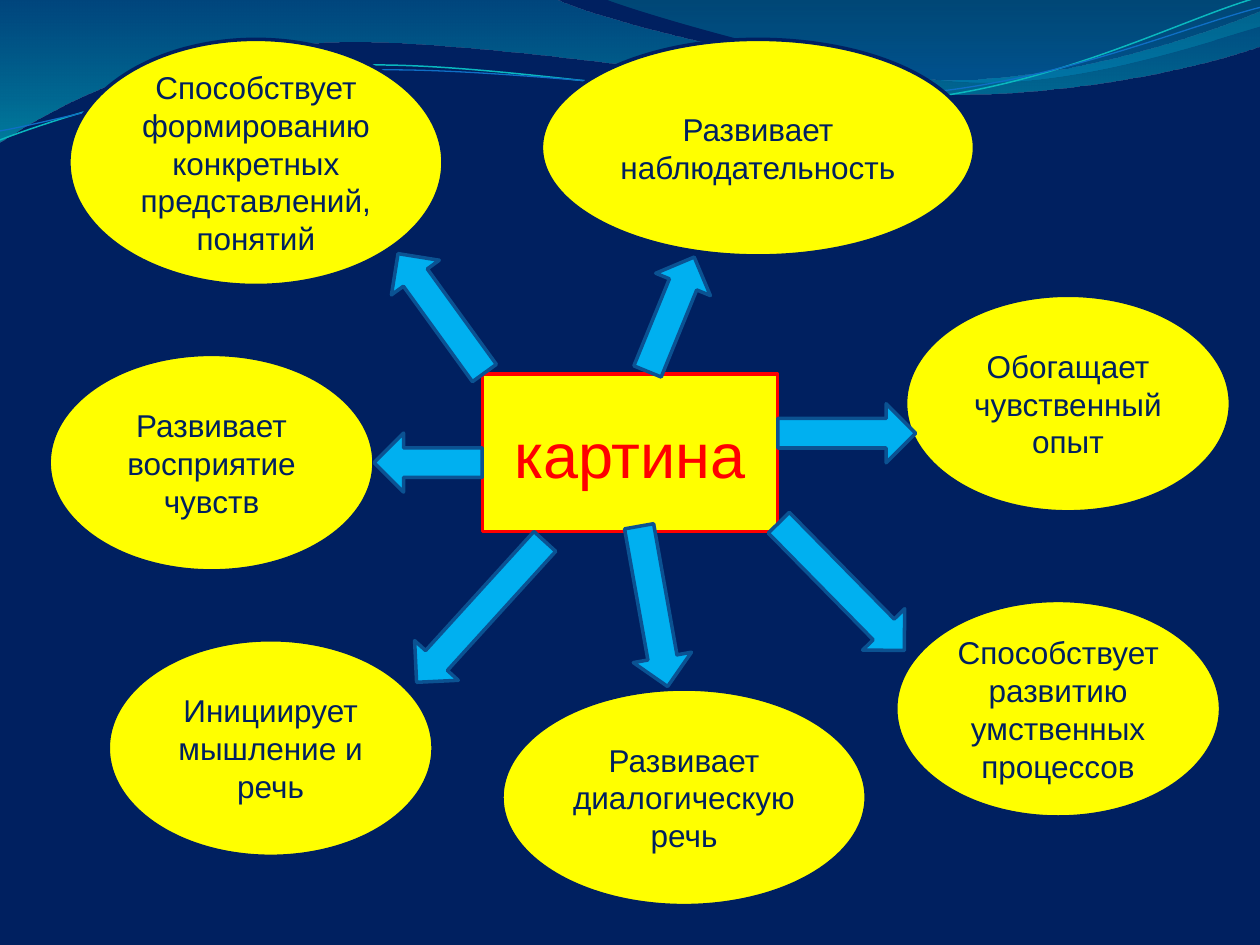
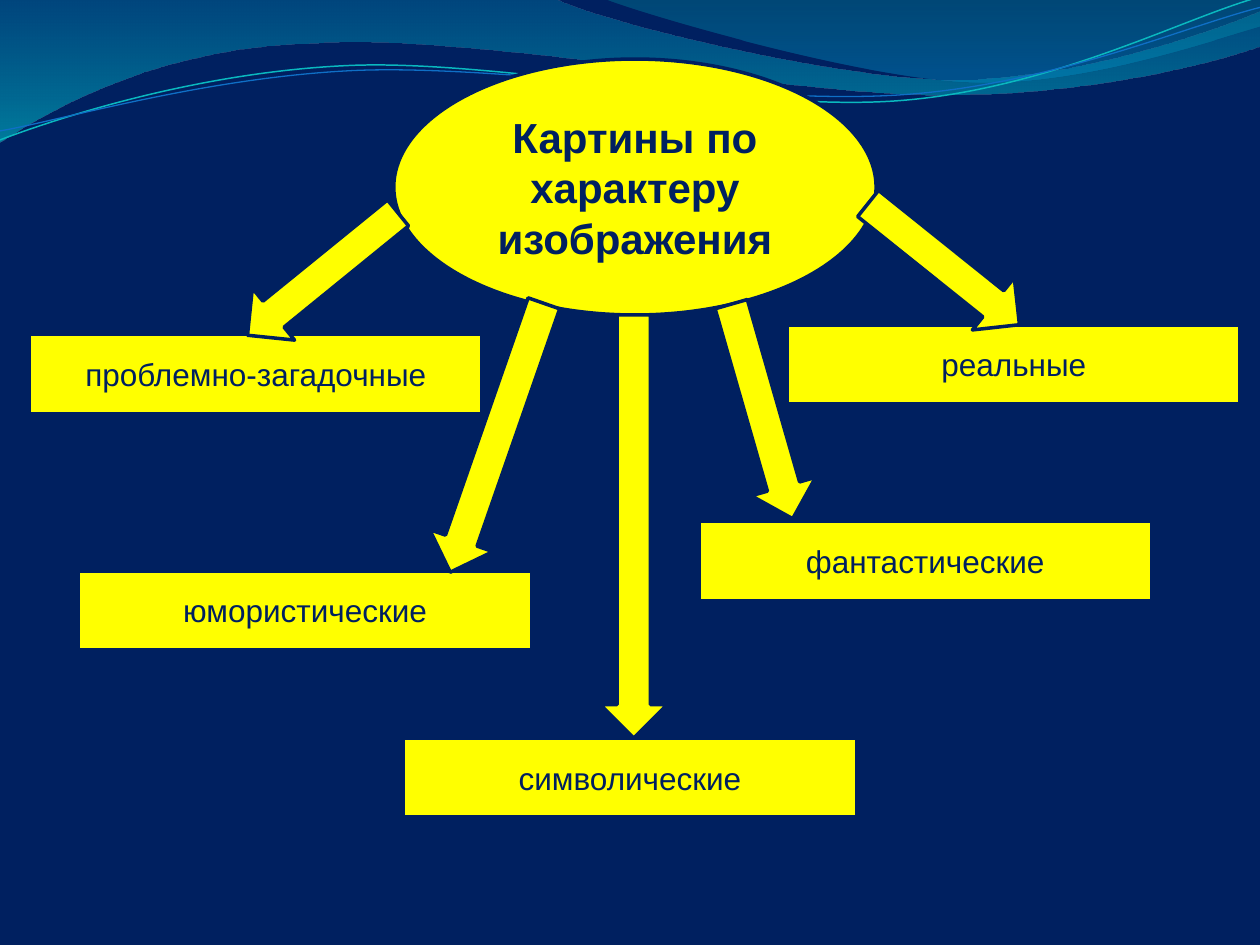
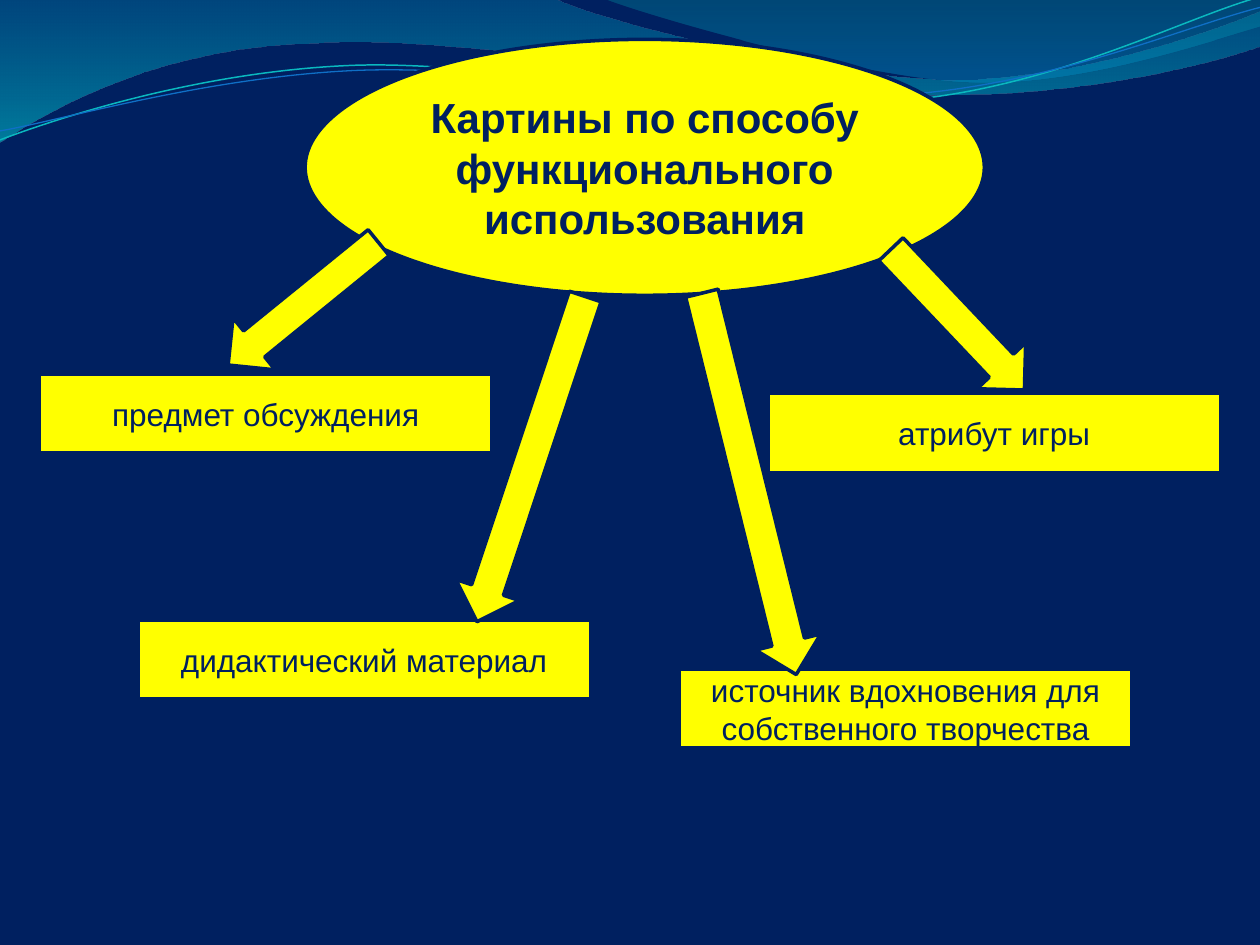
import math

from lxml import etree
from pptx import Presentation
from pptx import util as u
from pptx.dml.color import RGBColor
from pptx.enum import shapes, text
from pptx.oxml.ns import qn

NAVY, YELLOW, RED = "002060", "FFFF00", "FF0000"
SKY, STEEL = "00B0F0", "0B5292"
FONT = "Arial"
OVAL = shapes.MSO_SHAPE.OVAL
RECTANGLE = shapes.MSO_SHAPE.RECTANGLE
ARROW = shapes.MSO_SHAPE.RIGHT_ARROW
PAGE_WIDTH, PAGE_HEIGHT, COLUMNS = 25.4, 19.05, 128
STRAND_TILT = -2.7
BUBBLE = (33, 22)
LABEL = (46, 8)

BROAD_WAVE = [
    (0, 0), (11.18, -0.03),
    (12.09, 0.43, 16.87, 1.6, 19.25, 1.6),
    (21.67, 1.6, 24.33, 0.66, 25.4, 0.23),
    (25.43, 0.91),
    (24.97, 1.12, 22.1, 1.93, 18.95, 1.91),
    (15.8, 1.91, 9.7, 0.71, 6.53, 0.86),
    (3.28, 0.91, 1.17, 2.11, -0.03, 2.87),
    (0, 0),
]
RIGHT_WAVE = [
    (12.17, -0.03),
    (12.93, 0.28, 17.32, 1.57, 19.53, 1.65),
    (21.74, 1.75, 24.41, 0.81, 25.4, 0.53),
    (25.4, 0), (12.17, -0.03),
]
TEAL_STRAND = [
    (0, 2.82),
    (1.22, 2.36, 4.01, 1.45, 7.04, 1.32),
    (10.03, 1.19, 15.06, 2.26, 18.11, 2.03),
    (21.16, 1.8, 23.83, 0.38, 25.35, -0.05),
]
BLUE_STRAND = [
    (0, 2.64),
    (1.19, 2.44, 4.17, 1.55, 7.19, 1.42),
    (10.24, 1.3, 15.16, 2.13, 18.21, 1.91),
    (21.23, 1.7, 23.9, 0.53, 25.4, 0.15),
]


def color(hex_value):
    return RGBColor.from_string(hex_value)


def grid(cells):
    return u.Cm(PAGE_WIDTH * cells / COLUMNS)


def turned(point, center, degrees):
    angle = math.radians(degrees)
    dx, dy = point[0] - center[0], point[1] - center[1]
    return (center[0] + dx * math.cos(angle) - dy * math.sin(angle),
            center[1] + dx * math.sin(angle) + dy * math.cos(angle))


def add_outline(slide, outline, closed, center=(0, 0), tilt=0):
    points = [turned(segment[i:i + 2], center, -tilt)
              for segment in outline for i in range(0, len(segment), 2)]
    points = [(u.Cm(x), u.Cm(y)) for x, y in points]
    builder = slide.shapes.build_freeform(*points[0])
    builder.add_line_segments(points[1:], close=closed)
    shape = builder.convert_to_shape()
    shape.shadow.inherit = False
    shape.rotation = tilt
    bend(shape, outline)
    return shape


def bend(shape, outline):
    steps = iter(list(shape.element.iter(qn("a:lnTo"))))
    for segment in outline[1:]:
        first = next(steps)
        if len(segment) == 6:
            first.addprevious(etree.Element(qn("a:cubicBezTo")))
            curve = first.getprevious()
            for step in (first, next(steps), next(steps)):
                curve.append(step[0])
                step.getparent().remove(step)


def add_wave(slide, outline, stops):
    wave = add_outline(slide, outline, True)
    wave.line.fill.background()
    wave.fill.gradient()
    wave.fill.gradient_angle = 270
    for stop, (position, hex_value, opacity) in zip(wave.fill.gradient_stops, stops):
        stop.position = position
        stop.color.rgb = color(hex_value)
    tints = wave.element.spPr.find(qn("a:gradFill")).iter(qn("a:srgbClr"))
    for tint, (position, hex_value, opacity) in zip(tints, stops):
        etree.SubElement(tint, qn("a:alpha")).set("val", str(opacity * 1000))


def add_strand(slide, outline, center, hex_value, width):
    strand = add_outline(slide, outline, False, center, STRAND_TILT)
    strand.fill.background()
    strand.line.color.rgb = color(hex_value)
    strand.line.width = u.Pt(width)


def add_figure(slide, kind, bounds, fill, line):
    figure = slide.shapes.add_shape(kind, *bounds)
    figure.shadow.inherit = False
    figure.fill.solid()
    figure.fill.fore_color.rgb = color(fill)
    figure.line.color.rgb = color(line)
    figure.line.width = u.Pt(2)
    return figure


def add_caption(slide, kind, place, size, words, points=18, bold=False, ink=NAVY, line=NAVY):
    bounds = [grid(cells) for cells in place + size]
    frame = add_figure(slide, kind, bounds, YELLOW, line).text_frame
    frame.word_wrap = True
    frame.vertical_anchor = text.MSO_ANCHOR.MIDDLE
    paragraph = frame.paragraphs[0]
    paragraph.alignment = text.PP_ALIGN.CENTER
    run = paragraph.add_run()
    run.text = words
    run.font.name = FONT
    run.font.size = u.Pt(points)
    run.font.bold = bold
    run.font.color.rgb = color(ink)


def add_arrows(slide, arrows, thickness, fill, line):
    for left, top, length, turn in arrows:
        bounds = [u.Cm(value) for value in (left, top, length, thickness)]
        add_figure(slide, ARROW, bounds, fill, line).rotation = turn


def add_page(deck):
    slide = deck.slides.add_slide(deck.slide_layouts[6])
    slide.background.fill.solid()
    slide.background.fill.fore_color.rgb = color(NAVY)
    add_wave(slide, BROAD_WAVE, [(0, "0074A1", 45), (1, "00C6CF", 55)])
    add_wave(slide, RIGHT_WAVE, [(0, "00A1A9", 30), (0.8, "008BBF", 45)])
    add_strand(slide, TEAL_STRAND, (12.67, 1.46), "0AB8BF", 0.85)
    add_strand(slide, BLUE_STRAND, (12.69, 1.5), "0F6FC6", 0.75)
    return slide


def add_roles(deck):
    slide = add_page(deck)
    add_caption(slide, RECTANGLE, (49, 38), (30, 16), "картина",
                points=36, ink=RED, line=RED)
    roles = [
        ((7, 4), (38, 25), "Способствует формированию конкретных представлений, понятий"),
        ((5, 36), BUBBLE, "Развивает восприятие чувств"),
        ((91, 61), BUBBLE, "Способствует развитию умственных процессов"),
        ((51, 70), (37, 22), "Развивает диалогическую речь"),
        ((11, 65), BUBBLE, "Инициирует мышление и речь"),
        ((92, 30), BUBBLE, "Обогащает чувственный опыт"),
        ((55, 4), (44, 22), "Развивает наблюдательность"),
    ]
    for place, size, words in roles:
        add_caption(slide, OVAL, place, size, words)
    add_arrows(slide, [
        (12.28, 5.74, 2.49, 292.2),
        (7.41, 5.72, 2.97, 234.1),
        (7.54, 8.73, 2.18, 180),
        (7.77, 11.74, 3.84, 132.3),
        (11.53, 11.63, 3.28, 79.9),
        (15.16, 11.23, 3.61, 45.5),
        (15.68, 8.14, 2.78, 0),
    ], 1.19, SKY, STEEL)


def add_classification(deck, heading, place, width, kinds, arrows):
    slide = add_page(deck)
    add_caption(slide, OVAL, place, (width, 26), heading, points=24, bold=True)
    for left, top, words in kinds:
        add_caption(slide, RECTANGLE, (left, top), LABEL, words)
    add_arrows(slide, arrows, 1.35, YELLOW, NAVY)


def main():
    deck = Presentation()
    deck.slide_width, deck.slide_height = u.Cm(PAGE_WIDTH), u.Cm(PAGE_HEIGHT)
    add_roles(deck)
    add_classification(
        deck, "Картины по характеру изображения", (40, 6), 49,
        [
            (3, 34, "проблемно-загадочные"),
            (8, 58, "юмористические"),
            (41, 75, "символические"),
            (71, 53, "фантастические"),
            (80, 33, "реальные"),
        ],
        [
            (4.55, 4.85, 3.91, 140.9),
            (7.15, 8.15, 5.74, 109.2),
            (17.07, 4.65, 3.91, 38.7),
            (13.11, 7.62, 4.5, 74),
            (8.51, 9.94, 8.53, 90),
        ])
    add_classification(
        deck, "Картины по способу функционального использования", (31, 4), 69,
        [
            (78, 40, "атрибут игры"),
            (4, 38, "предмет обсуждения"),
            (69, 68, "источник вдохновения для собственного творчества"),
            (14, 63, "дидактический материал"),
        ],
        [
            (4.16, 5.45, 3.91, 140.9),
            (11.14, 9.08, 7.92, 76.1),
            (17.35, 5.77, 3.91, 46.5),
            (7.25, 8.58, 6.91, 108.4),
        ])
    deck.save("out.pptx")


if __name__ == "__main__":
    main()
